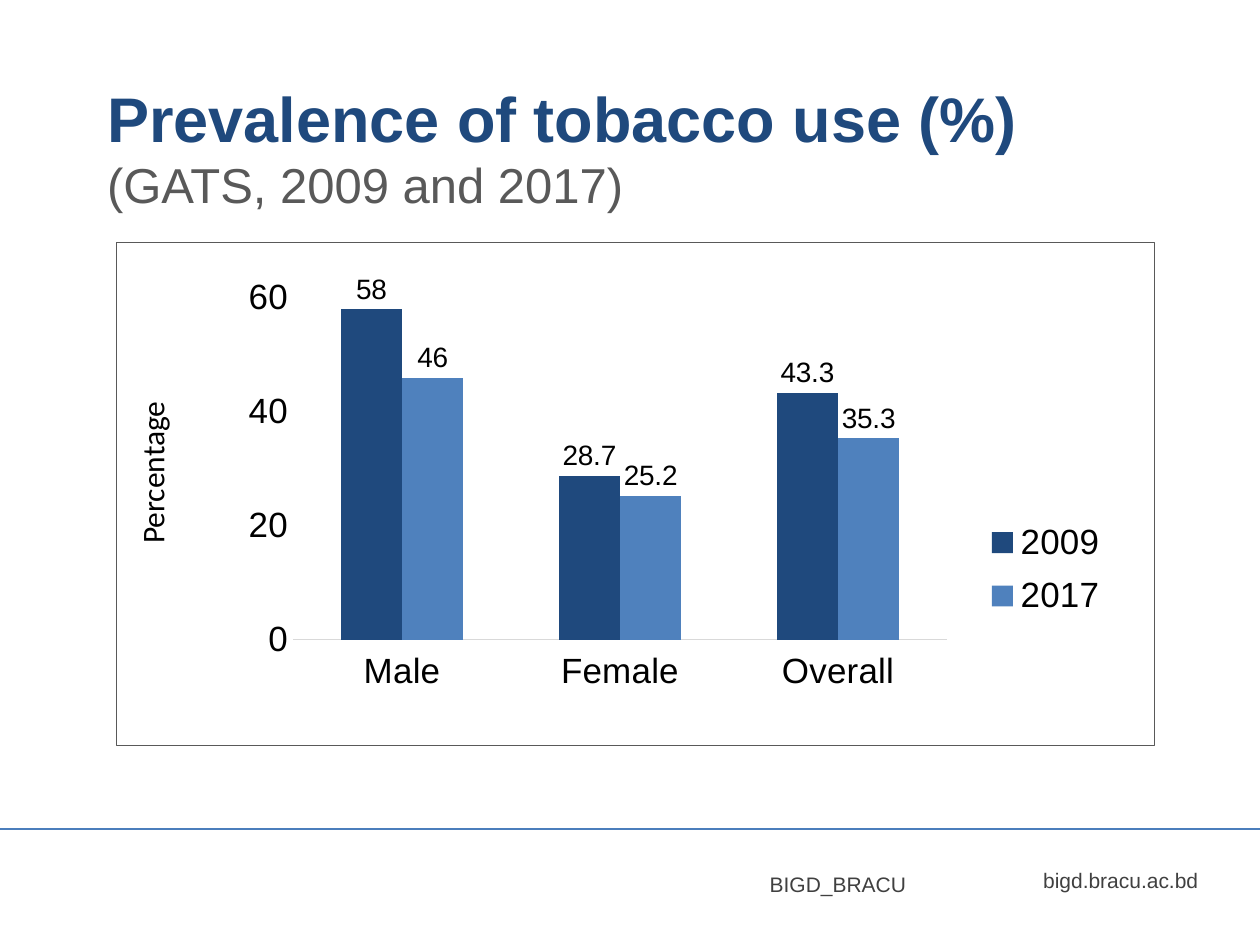
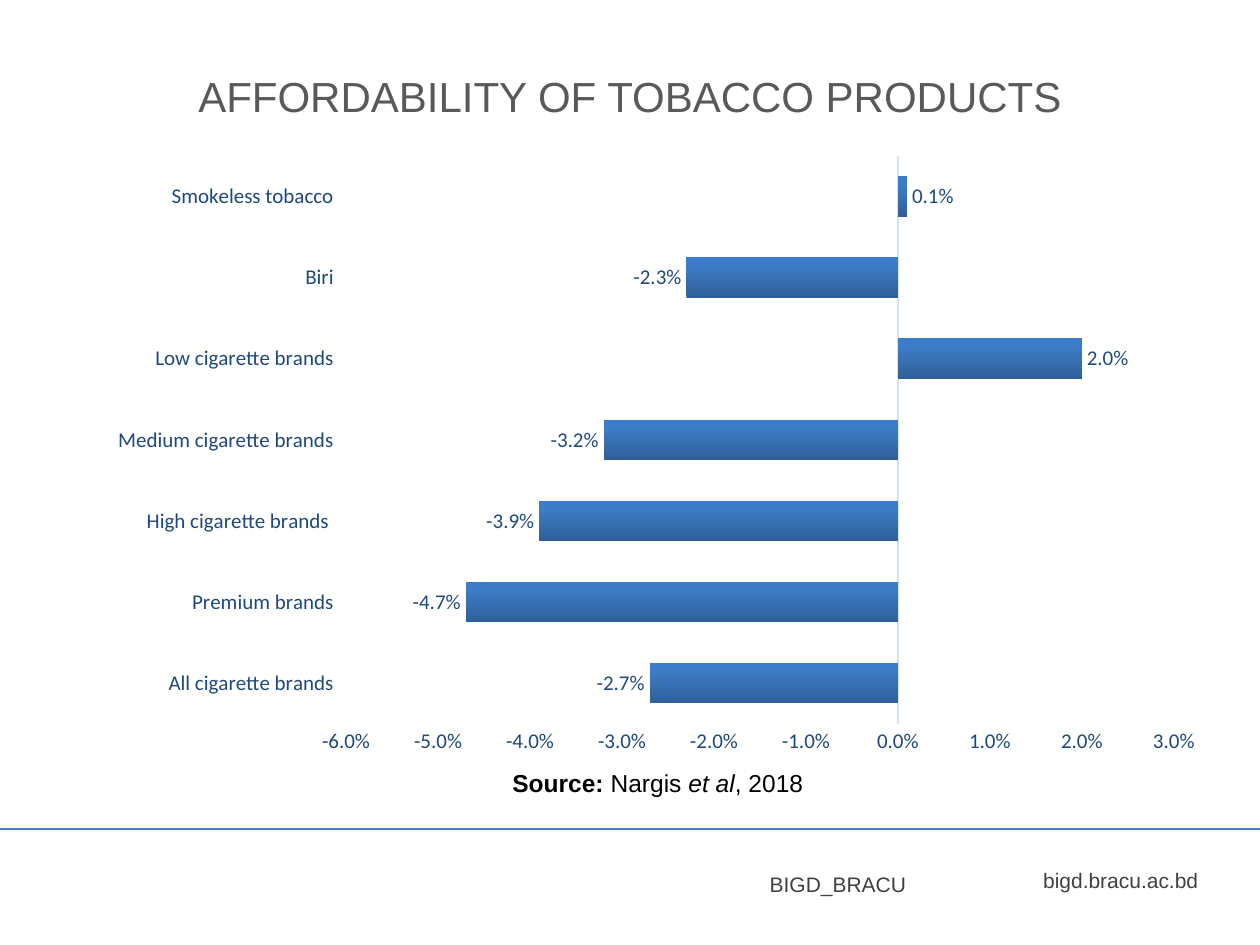
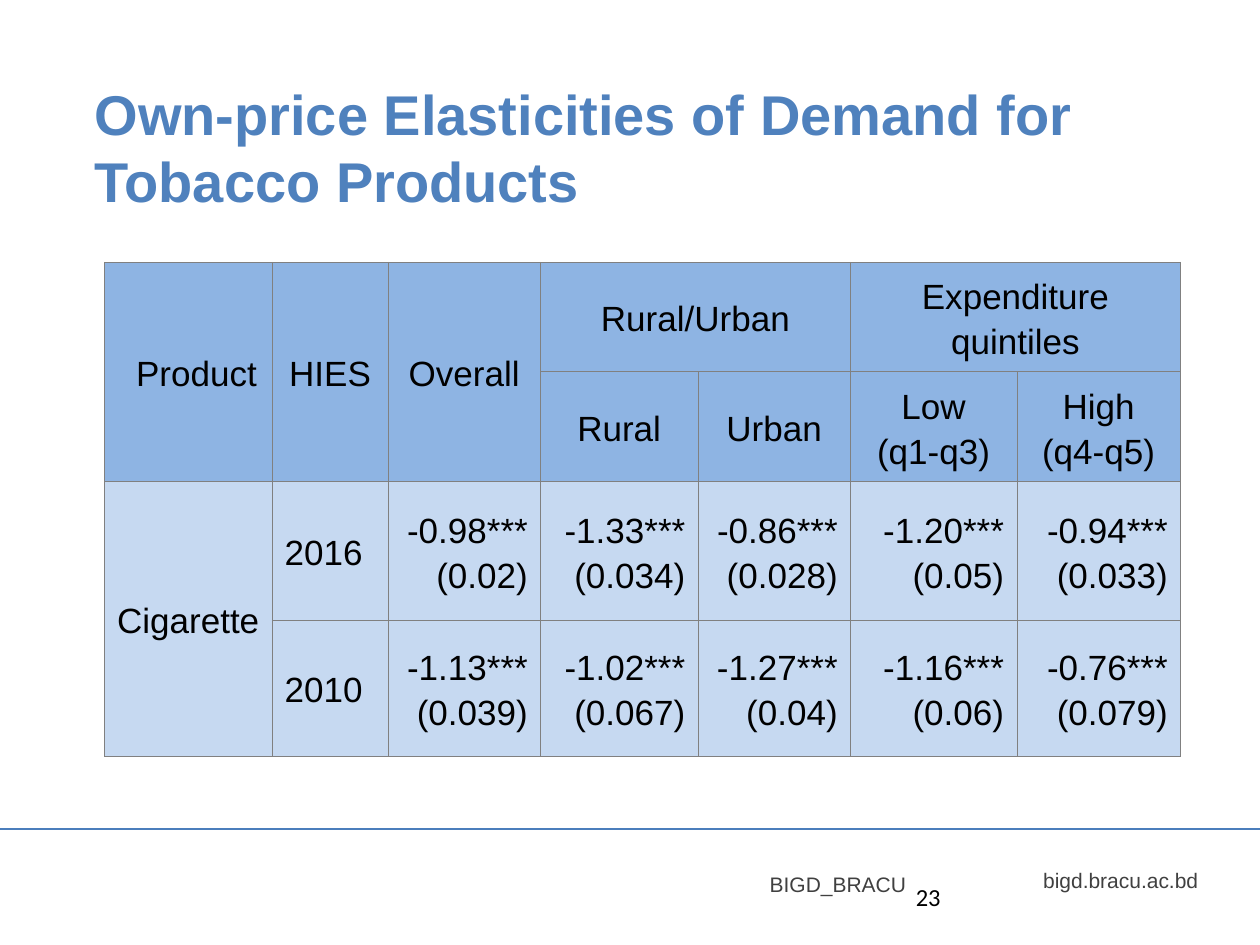
from dataclasses import dataclass
from lxml import etree
from pptx import Presentation
from pptx.chart.data import CategoryChartData
from pptx.dml.color import RGBColor as Rgb
from pptx.enum import chart as kinds, shapes, text
from pptx.oxml.ns import qn
from pptx.util import Inches, Pt

LEFT, MID, RIGHT = text.PP_ALIGN.LEFT, text.PP_ALIGN.CENTER, text.PP_ALIGN.RIGHT


@dataclass(frozen=True)
class Theme:
    sans: str = "Arial"
    alt: str = "Calibri"
    navy: str = "1F497D"
    blue: str = "4F81BD"
    rule: str = "4B7EBC"
    head: str = "8EB4E3"
    pale: str = "C6D9F1"
    axis: str = "D4E3F4"
    light: str = "D9D9D9"
    edge: str = "808080"
    gray: str = "595959"
    dark: str = "404040"
    black: str = "000000"
    foot: int = 12
    note: int = 14
    label: int = 16
    side: int = 18
    body: int = 20
    sub: int = 24
    second: int = 28
    title: int = 32
    main: int = 36


T = Theme()


def font(size, color=T.black, name=T.sans, **more):
    return {"name": name, "size": Pt(size), "rgb": Rgb.from_string(color), **more}


def paint(face, form):
    for key, val in form.items():
        setattr(face.color if key == "rgb" else face, key, val)


def apply(thing, form):
    for key, val in form.items():
        setattr(thing, key, val)


def node(parent, tag, **atts):
    return etree.SubElement(parent, qn(tag), {k: str(v) for k, v in atts.items()})


def solid(parent, color):
    node(node(parent, "a:solidFill"), "a:srgbClr", val=color)


def place(parent, index, box, inner=False):
    for old in parent.findall(qn("c:layout")):
        parent.remove(old)
    frame = node(parent, "c:layout")
    parent.insert(index, frame)
    man = node(frame, "c:manualLayout")
    if inner:
        node(man, "c:layoutTarget", val="inner")
    for key in "xy":
        node(man, f"c:{key}Mode", val="edge")
    for key, val in zip("xywh", box):
        node(man, f"c:{key}", val=val)


class Deck:
    def __init__(self):
        self.file = Presentation()
        self.file.slide_width, self.file.slide_height = Inches(10), Inches(7.5)
        self.slide = None

    def page(self, box, lines, align=LEFT, wrap=False):
        self.slide = self.file.slides.add_slide(self.file.slide_layouts[5])
        self.line((0, 6.58), (10, 6.58))
        small = font(T.foot, T.dark)
        self.text((8.17, 6.84, 1.44, 0.3), [[("bigd.bracu.ac.bd", small)]], RIGHT)
        self.text((6.01, 6.87, 1.29, 0.3), [[("BIGD_BRACU", small)]])
        head = self.slide.shapes.title
        sides = ("left", "top", "width", "height")
        apply(head, dict(zip(sides, map(Inches, box))))
        self.fill(head.text_frame, lines, align, wrap)

    def fill(self, frame, lines, align=LEFT, wrap=False, grow=True,
             anchor=text.MSO_ANCHOR.TOP):
        size = text.MSO_AUTO_SIZE
        apply(frame, {"word_wrap": wrap, "vertical_anchor": anchor,
                      "auto_size": size.SHAPE_TO_FIT_TEXT if grow else size.NONE})
        for i, runs in enumerate(lines):
            para = frame.add_paragraph() if i else frame.paragraphs[0]
            para.alignment = align
            for words, form in runs:
                run = para.add_run()
                run.text = words
                paint(run.font, form)

    def text(self, box, lines, align=LEFT, turn=0, **form):
        shape = self.slide.shapes.add_textbox(*map(Inches, box))
        shape.rotation = turn
        self.fill(shape.text_frame, lines, align, **form)

    def line(self, start, end):
        rule = self.slide.shapes.add_connector(
            shapes.MSO_CONNECTOR.STRAIGHT, *map(Inches, start + end))
        rule.line.color.rgb = Rgb.from_string(T.rule)
        rule.line.width = Pt(0.75)
        node(rule._element.spPr, "a:effectLst")

    def chart(self, box, kind, cats, rows, style):
        data = CategoryChartData(number_format=style["fmt"])
        data.categories = cats
        for name, vals in rows:
            data.add_series(name, vals)
        chart = self.slide.shapes.add_chart(kind, *map(Inches, box), data).chart
        chart.has_title = chart.has_legend = False
        paint(chart.font, style["font"])
        plot = chart.plots[0]
        apply(plot, {"gap_width": style["gap"], "vary_by_categories": False,
                     "has_data_labels": True})
        apply(plot.data_labels, {
            "show_value": True, "number_format": style["fmt"],
            "number_format_is_linked": False,
            "position": kinds.XL_LABEL_POSITION.OUTSIDE_END})
        paint(plot.data_labels.font, style["label"])
        for axis in (chart.category_axis, chart.value_axis):
            apply(axis, {"major_tick_mark": kinds.XL_TICK_MARK.NONE,
                         "minor_tick_mark": kinds.XL_TICK_MARK.NONE,
                         "has_major_gridlines": False})
            paint(axis.tick_labels.font, style["tick"])
        chart.category_axis.tick_label_position = kinds.XL_TICK_LABEL_POSITION.LOW
        edge = chart.category_axis.format.line
        edge.color.rgb = Rgb.from_string(style["axis"])
        edge.width = Pt(0.75)
        chart.value_axis.format.line.fill.background()
        apply(chart.value_axis, style["scale"])
        apply(chart.value_axis.tick_labels, {"number_format": style["fmt"],
                                             "number_format_is_linked": False})
        for series in plot.series:
            series.invert_if_negative = False
        return chart

    def table(self, spot, cols, rows, cells, spans, heads):
        grid = self.slide.shapes.add_table(
            len(rows), len(cols), *map(Inches, (*spot, sum(cols), sum(rows)))).table
        apply(grid, {"first_row": False, "horz_banding": False})
        for col, wide in zip(grid.columns, cols):
            col.width = Inches(wide)
        for row, high in zip(grid.rows, rows):
            row.height = Inches(high)
        for r, row in enumerate(cells):
            for c, words in enumerate(row):
                align = MID if r < heads else LEFT if c < 2 else RIGHT
                self.cell(grid.cell(r, c), words, align,
                          T.head if r < heads else T.pale)
        for top, left, low, right in spans:
            grid.cell(top, left).merge(grid.cell(low, right))
        return grid

    def cell(self, cell, words, align, color):
        props = cell._tc.get_or_add_tcPr()
        for side in "LRTB":
            solid(node(props, f"a:ln{side}", w=Pt(0.25)), T.edge)
        cell.fill.solid()
        cell.fill.fore_color.rgb = Rgb.from_string(color)
        cell.vertical_anchor = text.MSO_ANCHOR.MIDDLE
        cell.text = words
        for para in cell.text_frame.paragraphs:
            apply(para, {"alignment": align, "line_spacing": 1.15})
            paint(para.font, font(T.body))
            for run in para.runs:
                paint(run.font, font(T.body))


def usage(deck):
    deck.page((0.75, 0.58, 7.49, 1.18), [
        [("Prevalence of tobacco use (%)", font(T.main, T.navy, bold=True))],
        [("(GATS, 2009 and 2017)", font(T.second, T.gray, bold=False))]])
    chart = deck.chart(
        (0.92, 1.92, 8.25, 4), kinds.XL_CHART_TYPE.COLUMN_CLUSTERED,
        ["Male", "Female", "Overall"],
        [("2009", (58, 28.7, 43.3)), ("2017", (46, 25.2, 35.3))],
        {"font": font(T.body), "tick": font(T.body), "label": font(T.label),
         "fmt": "General", "gap": 156, "axis": T.light,
         "scale": {"minimum_scale": 0, "maximum_scale": 60, "major_unit": 20}})
    for series, color in zip(chart.plots[0].series, (T.navy, T.blue)):
        series.format.fill.solid()
        series.format.fill.fore_color.rgb = Rgb.from_string(color)
    chart.has_legend = True
    apply(chart.legend, {"position": kinds.XL_LEGEND_POSITION.BOTTOM,
                         "include_in_layout": False})
    paint(chart.legend.font, font(T.body))
    place(chart.legend._element, 1, (0.82, 0.53, 0.15, 0.24))
    space = chart._chartSpace
    body = space.find(qn("c:chart"))
    place(body.find(qn("c:plotArea")), 0, (0.17, 0.11, 0.63, 0.68), True)
    props = node(space, "c:spPr")
    body.addnext(props)
    node(props, "a:noFill")
    solid(node(props, "a:ln", w=Pt(0.75)), T.gray)
    deck.text((0.53, 3.54, 1.35, 0.4),
              [[("Percentage", font(T.side, name=T.alt))]], turn=270)


def prices(deck):
    deck.page((1.44, 0.51, 7.12, 0.5),
              [[("AFFORDABILITY OF TOBACCO PRODUCTS", font(T.sub, T.gray))]], MID)
    plain = font(T.note)
    deck.text((1.38, 6.02, 7.68, 0.38), [[
        ("Source: ", {**plain, "bold": True}), ("Nargis ", plain),
        ("et al", {**plain, "italic": True}), (", 2018", plain)]],
        MID, wrap=True, grow=False, anchor=text.MSO_ANCHOR.MIDDLE)
    small = font(T.foot, T.navy, T.alt)
    chart = deck.chart(
        (0.76, 1.14, 8.9, 4.94), kinds.XL_CHART_TYPE.BAR_CLUSTERED,
        ["All cigarette brands", "Premium brands", "High cigarette brands ",
         "Medium cigarette brands", "Low cigarette brands", "Biri",
         "Smokeless tobacco"],
        [("Series 1", (-0.027, -0.047, -0.039, -0.032, 0.02, -0.023, 0.001))],
        {"font": small, "tick": small, "label": small,
         "fmt": "0.0%", "gap": 100, "axis": T.axis,
         "scale": {"minimum_scale": -0.06, "maximum_scale": 0.03,
                   "major_unit": 0.01}})
    props = chart.plots[0].series[0]._element.get_or_add_spPr()
    grad = node(props, "a:gradFill", rotWithShape=1)
    stops = node(grad, "a:gsLst")
    for spot, color in ((0, "2F5F99"), (80, "3D7CC7"), (100, "3A7CCB")):
        node(node(stops, "a:gs", pos=spot * 1000), "a:srgbClr", val=color)
    node(grad, "a:lin", ang=270 * 60000, scaled=0)


def demand(deck):
    deck.page((0.65, 0.58, 8.19, 1.18),
              [[("Own-price Elasticities of Demand for Tobacco Products",
                 font(T.title, T.blue, bold=True))]], wrap=True)
    grid = deck.table(
        (0.83, 2.08), (1.33, 0.92, 1.21, 1.25, 1.21, 1.32, 1.3),
        (0.87, 0.87, 1.1, 1.08), [
            ["Product", "HIES", "Overall", "Rural/Urban", "",
             "Expenditure quintiles", ""],
            ["", "", "", "Rural", "Urban", "Low\n(q1-q3)", "High\n(q4-q5)"],
            ["Cigarette", "2016", "-0.98*** (0.02)", "-1.33*** (0.034)",
             "-0.86*** (0.028)", "-1.20***\n(0.05)", "-0.94***\n(0.033)"],
            ["", "2010", "-1.13*** (0.039)", "-1.02***\n(0.067)",
             "-1.27***\n(0.04)", "-1.16***\n(0.06)", "-0.76***\n(0.079)"]],
        [(0, 0, 1, 0), (0, 1, 1, 1), (0, 2, 1, 2), (0, 3, 0, 4),
         (0, 5, 0, 6), (2, 0, 3, 0)], heads=2)
    grid.cell(0, 0).margin_left = Inches(0.23)
    deck.text((7.17, 6.95, 2.33, 0.4), [[("23", font(T.note, name=T.alt))]],
              wrap=True, grow=False)


def main():
    deck = Deck()
    for build in (usage, prices, demand):
        build(deck)
    deck.file.save("out.pptx")


if __name__ == "__main__":
    main()
